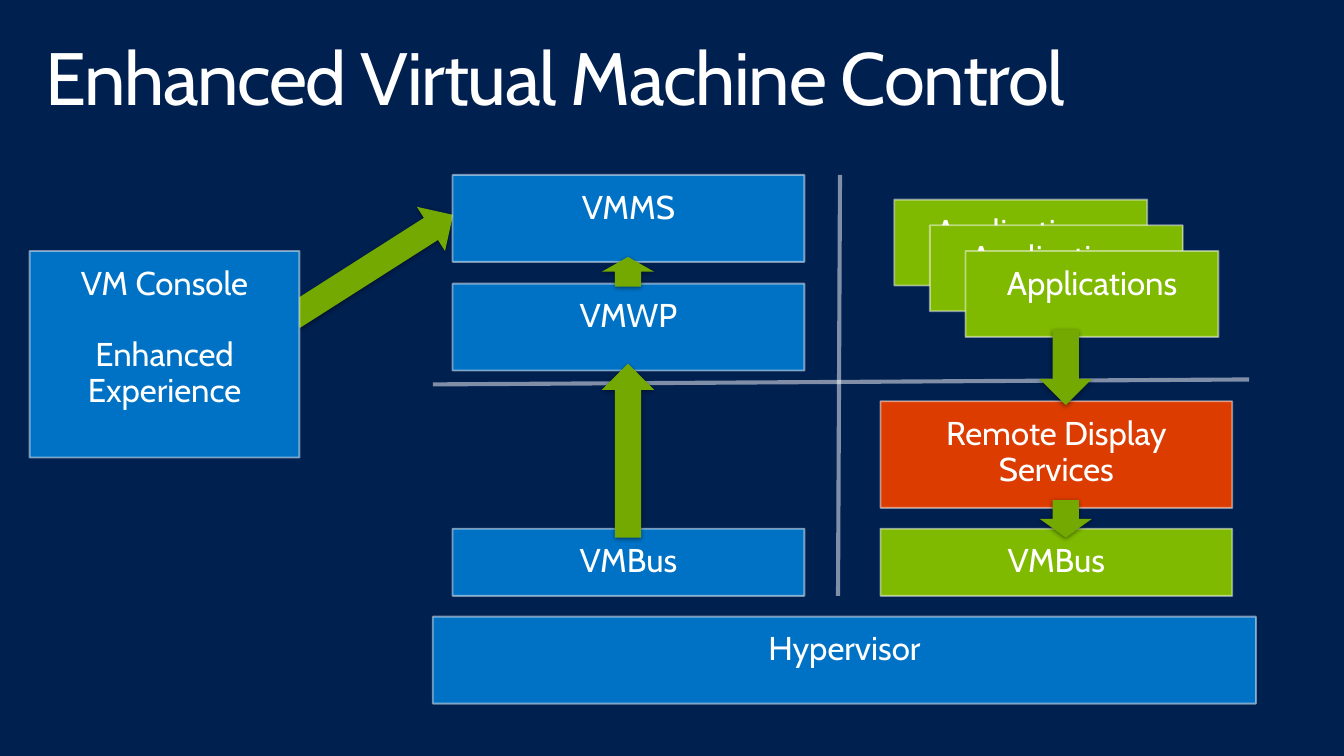
"""Build the Enhanced Virtual Machine Control architecture slide."""
import dataclasses

import lxml.etree
import pptx
import pptx.dml.color
import pptx.enum.shapes
import pptx.enum.text
import pptx.oxml.ns
import pptx.util

EMU_PER_PX = 9144
SHAPES = pptx.enum.shapes.MSO_SHAPE


@dataclasses.dataclass(frozen=True)
class Theme:
    background: str = "002050"
    text: str = "FFFFFF"
    blue: str = "0072C6"
    green: str = "7FBA00"
    orange: str = "DC3C00"
    arrow: str = "73A900"
    border: str = "F9F9F9"
    divider: str = "FFFFFF"
    shadow: str = "000000"
    font: str = "Cabin"
    title_size: int = 54
    label_size: int = 24
    paragraph_gap: int = 26
    border_width: float = 1.35
    divider_width: int = 3


THEME = Theme()


def px(*lengths):
    return [pptx.util.Emu(length * EMU_PER_PX) for length in lengths]


def rgb(color):
    return pptx.dml.color.RGBColor.from_string(color)


def add_xml(parent, tag, **attributes):
    return lxml.etree.SubElement(parent, pptx.oxml.ns.qn(tag), attributes)


def paint(shape, color):
    shape.fill.solid()
    shape.fill.fore_color.rgb = rgb(color)


def style_line(shape, color, width):
    shape.line.color.rgb = rgb(color)
    shape.line.width = pptx.util.Pt(width)
    line_color = shape.line.fill._xPr.find(".//" + pptx.oxml.ns.qn("a:srgbClr"))
    add_xml(line_color, "a:alpha", val="50000")


def write_text(shape, text, size, alignment, margins):
    frame = shape.text_frame
    frame.word_wrap = True
    frame.vertical_anchor = pptx.enum.text.MSO_ANCHOR.TOP
    horizontal, vertical = px(*margins)
    frame.margin_left = frame.margin_right = horizontal
    frame.margin_top = frame.margin_bottom = vertical
    frame.text = text
    for index, paragraph in enumerate(frame.paragraphs):
        paragraph.alignment = alignment
        paragraph.line_spacing = 0.9
        if index:
            paragraph.space_before = pptx.util.Pt(THEME.paragraph_gap)
        for run in paragraph.runs:
            run.font.name = THEME.font
            run.font.size = pptx.util.Pt(size)
            run.font.color.rgb = rgb(THEME.text)


def add_title(slide, text):
    title = slide.shapes.add_textbox(*px(30, 32, 1300, 100))
    write_text(title, text, THEME.title_size, pptx.enum.text.PP_ALIGN.LEFT, (16, 10))
    run = title.text_frame.paragraphs[0].runs[0]
    run.font._element.set("spc", "-100")


def add_box(slide, text, color, left, top, width, height):
    box = slide.shapes.add_shape(SHAPES.RECTANGLE, *px(left, top, width, height))
    box.shadow.inherit = False
    paint(box, color)
    style_line(box, THEME.border, THEME.border_width)
    write_text(box, text, THEME.label_size, pptx.enum.text.PP_ALIGN.CENTER, (20, 16))


def add_arrow(slide, direction, left, top, height, rotation=0):
    arrow = slide.shapes.add_shape(direction, *px(left, top, 53, height))
    arrow.rotation = rotation
    paint(arrow, THEME.arrow)
    arrow.line.fill.background()
    arrow.shadow.inherit = False
    effects = arrow._element.spPr.find(pptx.oxml.ns.qn("a:effectLst"))
    shadow = add_xml(effects, "a:outerShdw", blurRad="44450", dist="13970",
                     dir="5400000", algn="ctr", rotWithShape="0")
    shadow_color = add_xml(shadow, "a:srgbClr", val=THEME.shadow)
    add_xml(shadow_color, "a:alpha", val="45000")


def add_divider(slide, *ends):
    divider = slide.shapes.add_connector(
        pptx.enum.shapes.MSO_CONNECTOR.STRAIGHT, *px(*ends))
    style_line(divider, THEME.divider, THEME.divider_width)
    add_xml(divider._element.spPr, "a:effectLst")


def main():
    presentation = pptx.Presentation()
    presentation.slide_width, presentation.slide_height = px(1360, 765)
    slide = presentation.slides.add_slide(presentation.slide_layouts[6])
    slide.background.fill.solid()
    slide.background.fill.fore_color.rgb = rgb(THEME.background)

    add_arrow(slide, SHAPES.UP_ARROW, 351, 173, 192, rotation=57.5)
    add_title(slide, "Enhanced Virtual Machine Control")

    host_left, guest_left, stack_width = 458, 891, 356
    add_box(slide, "Hypervisor", THEME.blue, 438, 624, 833, 88)
    add_box(slide, "Remote Display Services", THEME.orange,
            guest_left, 406, stack_width, 108)
    add_box(slide, "VMBus", THEME.green, guest_left, 535, stack_width, 68)
    for text, top, height in (("VMBus", 535, 68), ("VMMS", 177, 88), ("VMWP", 287, 88)):
        add_box(slide, text, THEME.blue, host_left, top, stack_width, height)
    for step in range(3):
        add_box(slide, "Applications", THEME.green,
                905 + 36 * step, 202 + 26 * step, 256, 87)
    add_box(slide, "VM Console\nEnhanced Experience", THEME.blue, 30, 254, 273, 209)

    add_divider(slide, 850, 177, 848, 603)
    add_divider(slide, 438, 389, 1264, 384)

    for top, height in ((368, 176), (260, 30)):
        add_arrow(slide, SHAPES.UP_ARROW, 609, top, height)
    for top, height in ((506, 38), (334, 76)):
        add_arrow(slide, SHAPES.DOWN_ARROW, 1052, top, height)

    presentation.save("out.pptx")


if __name__ == "__main__":
    main()
